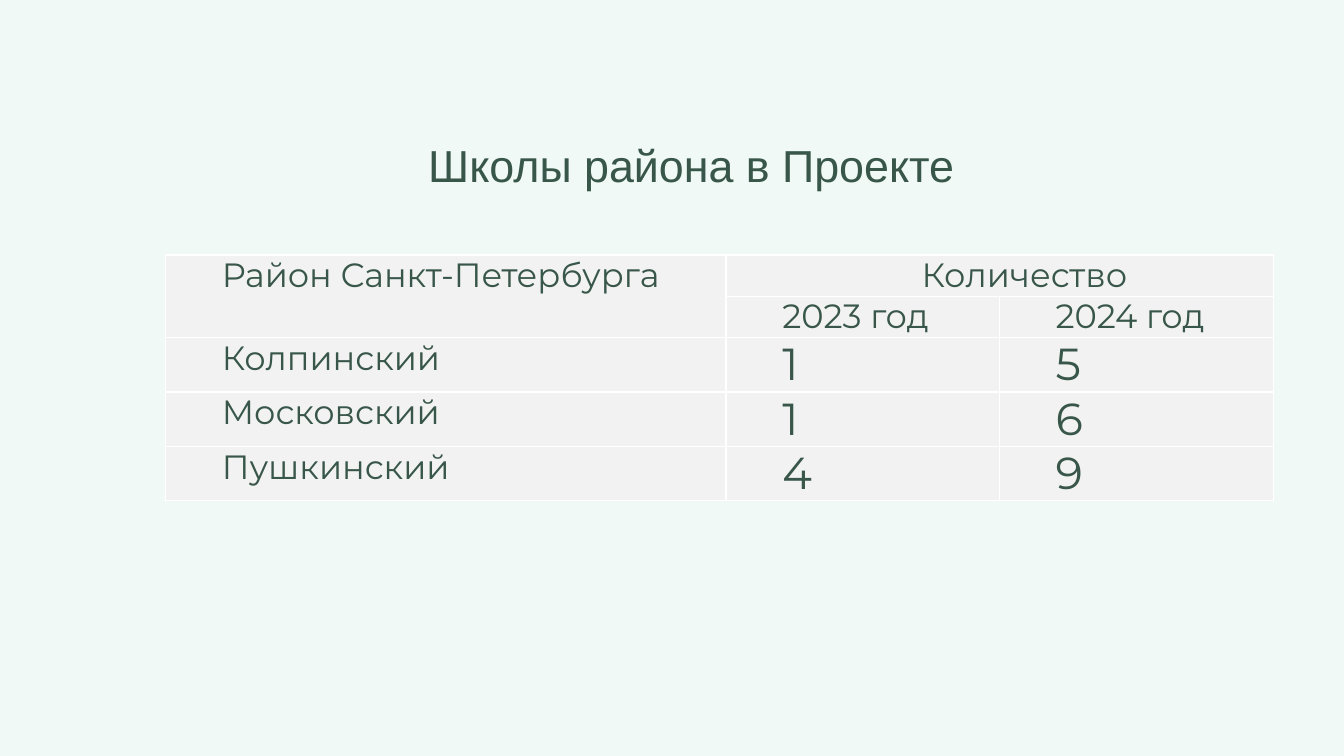
from dataclasses import dataclass

from lxml.etree import SubElement
from pptx import Presentation
from pptx.dml.color import RGBColor
from pptx.enum.text import MSO_ANCHOR, PP_ALIGN
from pptx.oxml.ns import qn
from pptx.util import Inches, Pt


@dataclass
class Theme:
    back: str = "F0F9F6"
    ink: str = "385649"
    cell: str = "F2F2F2"
    rule: str = "FFFFFF"
    head: str = "Arial"
    body: str = "Montserrat"
    large: int = 32
    small: int = 24


theme = Theme()


def style(para, face, size, align):
    para.alignment = align
    for run in para.runs:
        run.font.name = face
        run.font.size = Pt(size)
        run.font.color.rgb = RGBColor.from_string(theme.ink)


def edge(cell):
    props = cell._tc.get_or_add_tcPr()
    for side in ("a:lnL", "a:lnR", "a:lnT", "a:lnB"):
        line = SubElement(props, qn(side), w=str(Pt(1)))
        fill = SubElement(line, qn("a:solidFill"))
        SubElement(fill, qn("a:srgbClr"), val=theme.rule)


# Slide and background
deck = Presentation()
deck.slide_width, deck.slide_height = Inches(13.33), Inches(7.5)
slide = deck.slides.add_slide(deck.slide_layouts[6])
slide.background.fill.solid()
slide.background.fill.fore_color.rgb = RGBColor.from_string(theme.back)

# Title
title = slide.shapes.add_textbox(Inches(0.53), Inches(1.27), Inches(12.66), Inches(0.79))
frame = title.text_frame
frame.word_wrap = True
frame.vertical_anchor = MSO_ANCHOR.MIDDLE
frame.text = "Школы района в Проекте"
frame.paragraphs[0].line_spacing = 0.9
style(frame.paragraphs[0], theme.head, theme.large, PP_ALIGN.CENTER)

# Table grid
rows = [
    ("Район Санкт-Петербурга", "Количество", ""),
    ("", "2023 год", "2024 год"),
    ("Колпинский", "1", "5"),
    ("Московский", "1", "6"),
    ("Пушкинский", "4", "9"),
]
widths = (5.56, 2.71, 2.72)
heights = (0.41, 0.41, 0.54, 0.54, 0.54)
table = slide.shapes.add_table(
    len(rows), len(widths), Inches(1.64), Inches(2.53),
    Inches(sum(widths)), Inches(sum(heights)),
).table
table.first_row = table.horz_banding = False
for col, width in zip(table.columns, widths):
    col.width = Inches(width)
for row, height in zip(table.rows, heights):
    row.height = Inches(height)
table.cell(0, 0).merge(table.cell(1, 0))
table.cell(0, 1).merge(table.cell(0, 2))

# Table cells
for r, row in enumerate(rows):
    for c, text in enumerate(row):
        cell = table.cell(r, c)
        edge(cell)
        cell.fill.solid()
        cell.fill.fore_color.rgb = RGBColor.from_string(theme.cell)
        cell.margin_left = cell.margin_right = Inches(0.07)
        cell.margin_top = cell.margin_bottom = 0
        if not text:
            continue
        cell.text_frame.text = text
        para = cell.text_frame.paragraphs[0]
        para._p.get_or_add_pPr().set("indent", str(Inches(0.49)))
        size = theme.large if text.isdigit() else theme.small
        align = PP_ALIGN.CENTER if (r, c) == (0, 1) else PP_ALIGN.JUSTIFY
        style(para, theme.body, size, align)

deck.save("out.pptx")
